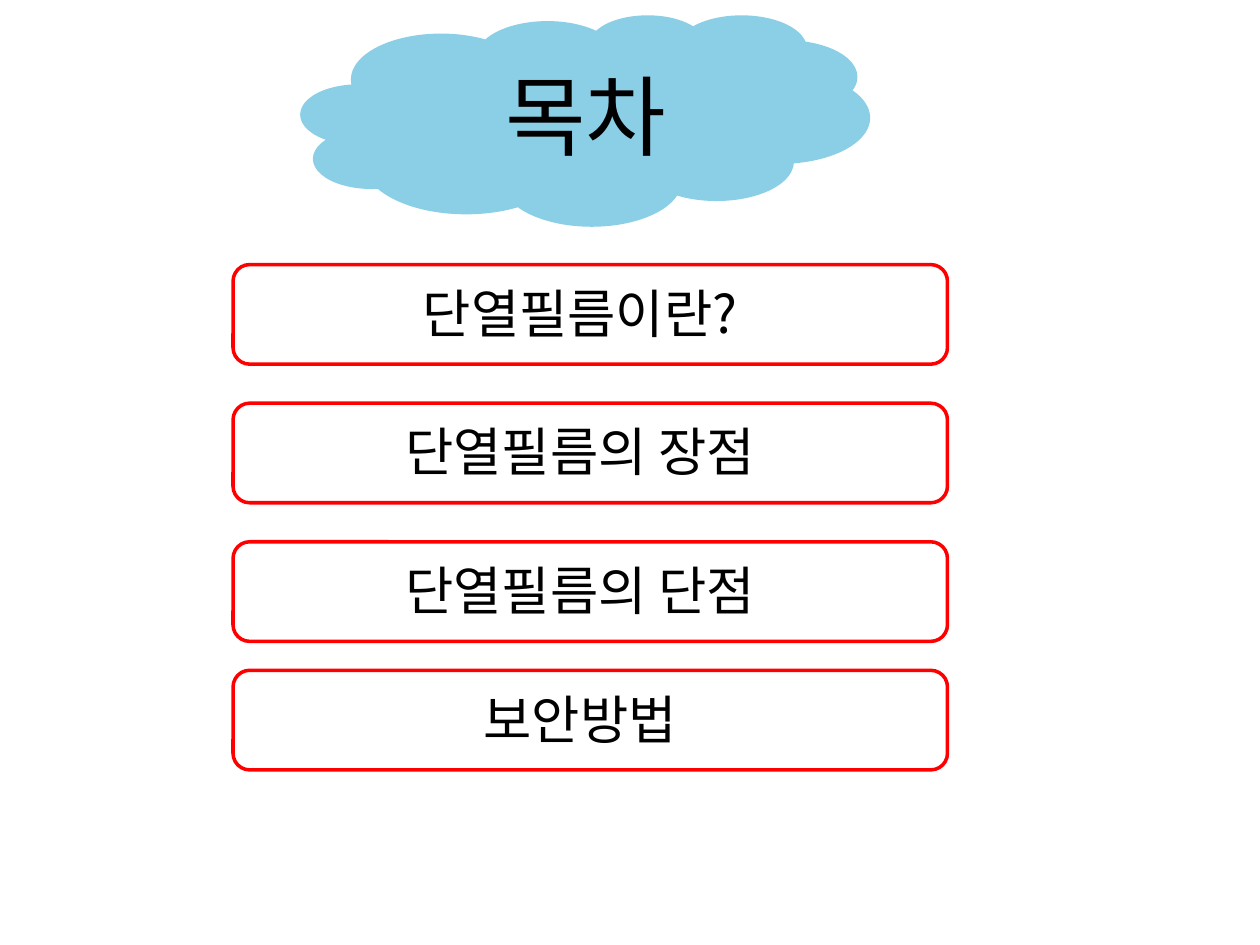
from dataclasses import dataclass

from lxml.etree import SubElement
from pptx import Presentation
from pptx.dml.color import RGBColor
from pptx.enum.shapes import MSO_SHAPE
from pptx.enum.text import MSO_AUTO_SIZE, PP_ALIGN
from pptx.oxml.ns import qn
from pptx.util import Inches, Pt

# Content: the heading, then each entry with the top of its frame
HEADING = "목차"
ENTRIES = [
    ("단열필름이란?", 2.1),
    ("단열필름의 장점", 3.2),
    ("단열필름의 단점", 4.3),
    ("보안방법", 5.32),
]


@dataclass(frozen=True)
class Theme:
    font: str = "Noto Sans CJK KR"
    heading_size: int = 50
    entry_size: int = 30
    line_width: int = 2
    text: RGBColor = RGBColor(0, 0, 0)
    cloud: RGBColor = RGBColor(0x8B, 0xCF, 0xE7)
    frame: RGBColor = RGBColor(0xFF, 0, 0)


THEME = Theme()

# Layout in inches
CLOUD_BOX = (2.4, 0.13, 4.49, 1.65)
HEADING_BOX = (3.35, 0.44, 2.6, 0.94)
FRAME_LEFT, FRAME_WIDTH, FRAME_HEIGHT = 1.85, 5.67, 0.79
LABEL_LEFT, LABEL_WIDTH, LABEL_HEIGHT = 2.32, 4.57, 0.61
LABEL_DROP = 0.08


def add_outline(slide, preset, box, line, fill=None):
    outline = slide.shapes.add_shape(preset, *map(Inches, box))
    outline.shadow.inherit = False
    if fill is None:
        outline.fill.background()
    else:
        outline.fill.solid()
        outline.fill.fore_color.rgb = fill
    outline.line.color.rgb = line
    outline.line.width = Pt(THEME.line_width)


def add_label(slide, wording, box, size):
    frame = slide.shapes.add_textbox(*map(Inches, box)).text_frame
    frame.word_wrap = True
    frame.auto_size = MSO_AUTO_SIZE.SHAPE_TO_FIT_TEXT
    paragraph = frame.paragraphs[0]
    paragraph.alignment = PP_ALIGN.CENTER
    run = paragraph.add_run()
    run.text = wording
    run.font.size = Pt(size)
    run.font.color.rgb = THEME.text
    run.font.name = THEME.font
    # Hangul takes the East Asian typeface
    SubElement(run.font._element, qn("a:ea"), typeface=THEME.font)


def main():
    deck = Presentation()
    deck.slide_width, deck.slide_height = Inches(10), Inches(7.5)
    slide = deck.slides.add_slide(deck.slide_layouts[6])

    # Heading on its cloud
    add_outline(slide, MSO_SHAPE.CLOUD, CLOUD_BOX, THEME.cloud, THEME.cloud)
    add_label(slide, HEADING, HEADING_BOX, THEME.heading_size)

    # Framed entries
    for wording, top in ENTRIES:
        add_outline(slide, MSO_SHAPE.ROUNDED_RECTANGLE,
                    (FRAME_LEFT, top, FRAME_WIDTH, FRAME_HEIGHT), THEME.frame)
        add_label(slide, wording,
                  (LABEL_LEFT, top + LABEL_DROP, LABEL_WIDTH, LABEL_HEIGHT),
                  THEME.entry_size)

    deck.save("out.pptx")


if __name__ == "__main__":
    main()
